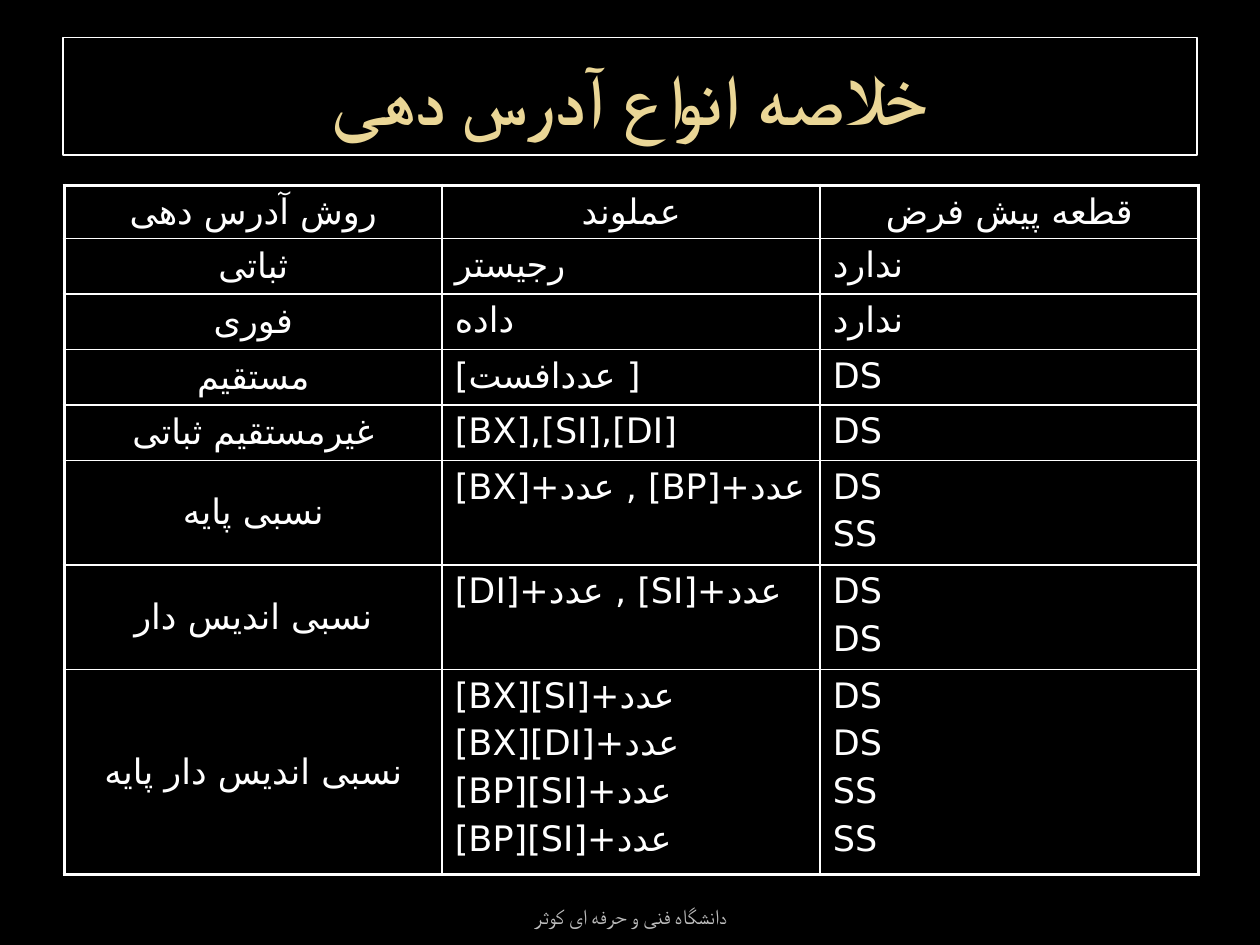
import pptx
import pptx.dml.color
import pptx.enum.shapes
import pptx.enum.text
import pptx.oxml
import pptx.oxml.ns
import pptx.util

BLACK = pptx.dml.color.RGBColor(0x00, 0x00, 0x00)
WHITE = pptx.dml.color.RGBColor(0xFF, 0xFF, 0xFF)
GOLD = pptx.dml.color.RGBColor(0xEA, 0xD6, 0x96)
GRAY = pptx.dml.color.RGBColor(0xBD, 0xBD, 0xBD)

CENTER = pptx.enum.text.PP_ALIGN.CENTER
LEFT = pptx.enum.text.PP_ALIGN.LEFT
TOP = pptx.enum.text.MSO_ANCHOR.TOP
MIDDLE = pptx.enum.text.MSO_ANCHOR.MIDDLE
BOTTOM = pptx.enum.text.MSO_ANCHOR.BOTTOM

WIDTH = pptx.util.Inches(10)
HEIGHT = pptx.util.Inches(7.5)
TITLE_BOX = (0.05, 0.04, 0.9, 0.124)
TABLE_BOX = (0.051, 0.196, 0.9, 0.732)
FOOTER_BOX = (0.342, 0.936, 0.317, 0.053)

TITLE_FONT = {"name": "Noto Sans", "size": pptx.util.Pt(41), "bold": True}
TABLE_FONT = {"name": "DejaVu Sans", "size": pptx.util.Pt(20)}
FOOTER_FONT = {"name": "Cambria", "size": pptx.util.Pt(12)}

THIN = 1
THICK = 2.25
ROW_HEIGHTS = [0.42] + [0.44] * 4 + [0.83] * 2 + [1.63]
MODES = [
    ("روش آدرس دهی", ["عملوند"], ["قطعه پیش فرض"]),
    ("ثباتی", ["رجیستر"], ["ندارد"]),
    ("فوری", ["داده"], ["ندارد"]),
    ("مستقیم", ["[عددافست ]"], ["DS"]),
    ("غیرمستقیم ثباتی", ["[BX],[SI],[DI]"], ["DS"]),
    ("نسبی پایه", ["[BX]+عدد , [BP]+عدد"], ["DS", "SS"]),
    ("نسبی اندیس دار", ["[DI]+عدد , [SI]+عدد"], ["DS", "DS"]),
    (
        "نسبی اندیس دار پایه",
        ["[BX][SI]+عدد", "[BX][DI]+عدد", "[BP][SI]+عدد", "[BP][SI]+عدد"],
        ["DS", "DS", "SS", "SS"],
    ),
]


def place(box):
    left, top, width, height = box
    return (
        int(left * WIDTH),
        int(top * HEIGHT),
        int(width * WIDTH),
        int(height * HEIGHT),
    )


def apply(target, values):
    for key, value in values.items():
        setattr(target, key, value)


def write(frame, lines, font, color, para_format):
    for index, line in enumerate(lines):
        para = frame.add_paragraph() if index else frame.paragraphs[0]
        apply(para, para_format)
        span = para.add_run()
        span.text = line
        apply(span.font, font)
        span.font.color.rgb = color
        script_font = pptx.oxml.parse_xml(
            f'<a:cs {pptx.oxml.ns.nsdecls("a")} typeface="{font["name"]}"/>'
        )
        span.font._element.append(script_font)


def draw_title(page, box):
    shape = page.shapes.add_shape(
        pptx.enum.shapes.MSO_SHAPE.RECTANGLE, *place(box)
    )
    shape.shadow.inherit = False
    shape.fill.background()
    shape.line.color.rgb = WHITE
    shape.line.width = pptx.util.Pt(0.75)
    apply(shape.text_frame, {"word_wrap": True, "vertical_anchor": MIDDLE})
    write(
        shape.text_frame,
        ["خلاصه انواع آدرس دهی"],
        TITLE_FONT,
        GOLD,
        {"alignment": CENTER},
    )


def draw_borders(cell, widths):
    properties = cell._tc.get_or_add_tcPr()
    for side, width in widths.items():
        properties.append(
            pptx.oxml.parse_xml(
                f'<a:ln{side} {pptx.oxml.ns.nsdecls("a")} '
                f'w="{pptx.util.Pt(width)}"><a:solidFill>'
                f'<a:srgbClr val="{WHITE}"/></a:solidFill></a:ln{side}>'
            )
        )


def draw_modes(page, box):
    last_row = len(MODES) - 1
    last_column = len(MODES[0]) - 1
    table = page.shapes.add_table(
        last_row + 1, last_column + 1, *place(box)
    ).table
    apply(table, {"first_row": False, "horz_banding": False})
    for row, height in zip(table.rows, ROW_HEIGHTS):
        row.height = pptx.util.Inches(height)
    for y, (mode, operands, segments) in enumerate(MODES):
        for x, lines in enumerate(([mode], operands, segments)):
            cell = table.cell(y, x)
            draw_borders(
                cell,
                {
                    "L": THICK if x == 0 else THIN,
                    "R": THICK if x == last_column else THIN,
                    "T": THICK if y == 0 else THIN,
                    "B": THICK if y == last_row else THIN,
                },
            )
            cell.fill.background()
            cell.vertical_anchor = MIDDLE if x == 0 and y > 0 else TOP
            alignment = CENTER if x == 0 or y == 0 else LEFT
            write(
                cell.text_frame,
                lines,
                TABLE_FONT,
                WHITE,
                {"alignment": alignment, "space_before": pptx.util.Pt(4)},
            )


def draw_footer(page, box):
    frame = page.shapes.add_textbox(*place(box)).text_frame
    apply(frame, {"word_wrap": True, "vertical_anchor": BOTTOM})
    write(
        frame,
        ["دانشگاه فنی و حرفه ای کوثر"],
        FOOTER_FONT,
        GRAY,
        {"alignment": CENTER},
    )


def main():
    deck = pptx.Presentation()
    apply(deck, {"slide_width": WIDTH, "slide_height": HEIGHT})
    page = deck.slides.add_slide(deck.slide_layouts[6])
    page.background.fill.solid()
    page.background.fill.fore_color.rgb = BLACK
    draw_title(page, TITLE_BOX)
    draw_modes(page, TABLE_BOX)
    draw_footer(page, FOOTER_BOX)
    deck.save("out.pptx")


if __name__ == "__main__":
    main()
